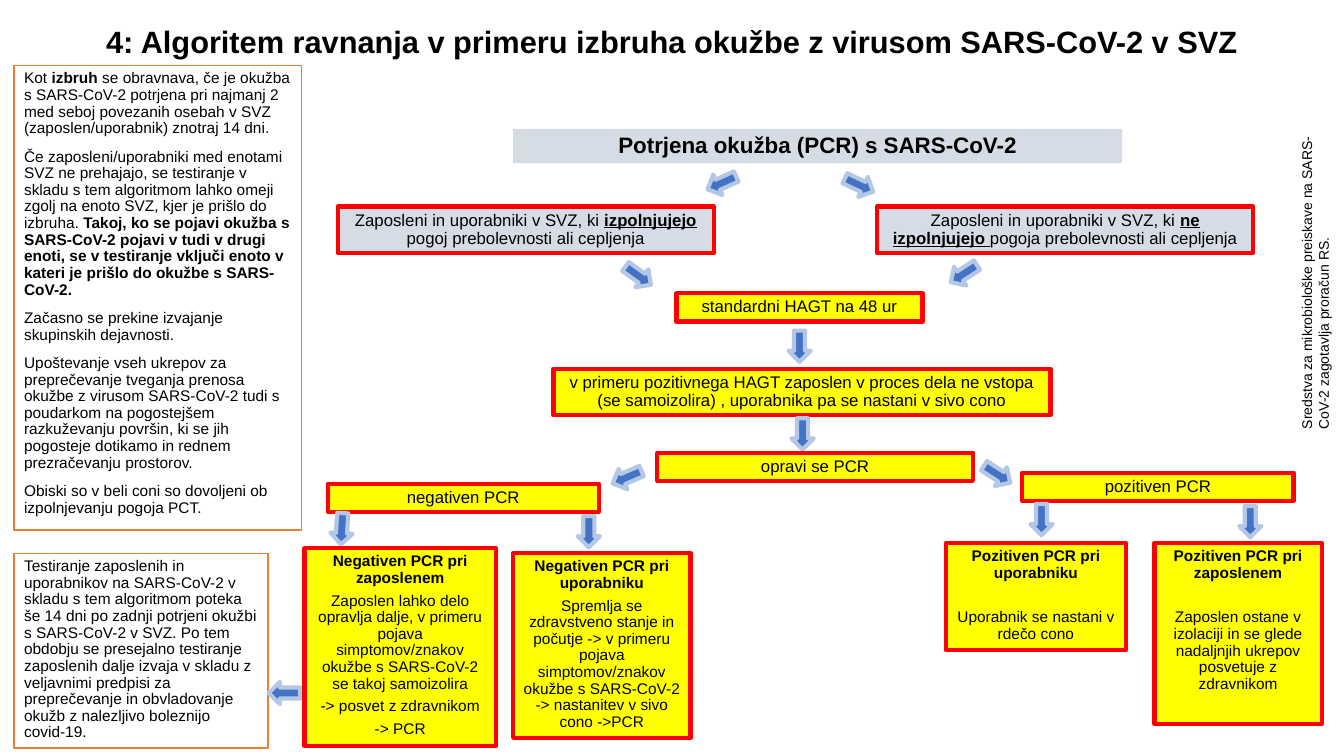
from pptx import Presentation
from pptx.dml.color import RGBColor
from pptx.enum.shapes import MSO_SHAPE
from pptx.enum.text import MSO_ANCHOR, PP_ALIGN
from pptx.util import Inches, Pt

RECTANGLE, DOWN_ARROW = MSO_SHAPE.RECTANGLE, MSO_SHAPE.DOWN_ARROW
LEFT, CENTER = PP_ALIGN.LEFT, PP_ALIGN.CENTER
TOP, MIDDLE = MSO_ANCHOR.TOP, MSO_ANCHOR.MIDDLE

WHITE, BLACK, GREY, YELLOW = "FFFFFF", "000000", "D6DCE5", "FFFF00"
RED, ORANGE, BLUE, PALE_BLUE = "FF0000", "ED7D31", "4472C4", "B4C7E7"

# A paragraph is a list of (text, style) spans; "b" is bold, "u" is underlined.
OUTBREAK_RULES = [
    [("Kot ", ""), ("izbruh", "b"),
     (" se obravnava, če je okužba s SARS-CoV-2 potrjena pri najmanj 2 med seboj povezanih "
      "osebah v SVZ (zaposlen/uporabnik) znotraj 14 dni.", "")],
    [("Če zaposleni/uporabniki med enotami SVZ ne prehajajo, se testiranje v skladu s tem "
      "algoritmom lahko omeji zgolj na enoto SVZ, kjer je prišlo do izbruha. ", ""),
     ("Takoj, ko se pojavi okužba s SARS-CoV-2 pojavi v tudi v drugi enoti, se v testiranje "
      "vključi enoto v kateri je prišlo do okužbe s SARS-CoV-2.", "b")],
    [("Začasno se prekine izvajanje skupinskih dejavnosti.", "")],
    [("Upoštevanje vseh ukrepov za preprečevanje tveganja prenosa okužbe z virusom SARS-CoV-2 "
      "tudi s poudarkom na pogostejšem razkuževanju površin, ki se jih pogosteje dotikamo in "
      "rednem prezračevanju prostorov.", "")],
    [("Obiski so v beli coni so dovoljeni ob izpolnjevanju pogoja PCT.", "")],
]
TESTING_PERIOD = [
    [("Testiranje zaposlenih in uporabnikov na SARS-CoV-2 v skladu s tem algoritmom poteka še "
      "14 dni po zadnji potrjeni okužbi s SARS-CoV-2 v SVZ. Po tem obdobju se presejalno "
      "testiranje zaposlenih dalje izvaja v skladu z veljavnimi predpisi za preprečevanje in "
      "obvladovanje okužb z nalezljivo boleznijo covid-19.", "")],
]
# Left, top, width, height, fill, spans
STEPS = [
    (3.35, 2.05, 3.73, 0.46, GREY,
     [("Zaposleni in uporabniki v SVZ, ki ", ""), ("izpolnjujejo", "bu"),
      (" pogoj prebolevnosti ali cepljenja", "")]),
    (8.7, 2.05, 3.73, 0.46, GREY,
     [("Zaposleni in uporabniki v SVZ, ki ", ""), ("ne izpolnjujejo ", "bu"),
      ("pogoja prebolevnosti ali cepljenja", "")]),
    (6.71, 2.91, 2.44, 0.28, YELLOW, [("standardni HAGT na 48 ur", "")]),
    (5.49, 3.66, 4.93, 0.46, YELLOW,
     [("v primeru pozitivnega HAGT zaposlen v proces dela ne vstopa (se samoizolira) , "
       "uporabnika pa se nastani v sivo cono", "")]),
    (3.25, 4.8, 2.69, 0.28, YELLOW, [("negativen PCR", "")]),
    (10.14, 4.69, 2.69, 0.28, YELLOW, [("pozitiven PCR", "")]),
]
PCR_STEP = (6.52, 4.49, 3.13, 0.28, YELLOW, [("opravi se PCR", "")])
# Left, top, rotation
ARROWS = [
    (7.05, 1.66, 66), (8.41, 1.68, 295.4), (6.22, 2.58, 305.8), (9.45, 2.56, 56.9),
    (7.82, 3.28, 0), (7.85, 4.15, 0), (6.11, 4.58, 66.7), (9.78, 4.55, 302.7),
    (3.28, 5.09, 3.4), (5.73, 5.12, 0), (10.22, 5, 0), (12.29, 5.02, 0), (2.71, 6.72, 90),
]
# Left, top, width, height, space after heading, heading, body paragraphs
OUTCOMES = [
    (3.02, 5.44, 1.9, 1.96, 4.4, "Negativen PCR pri zaposlenem",
     ["Zaposlen lahko delo opravlja dalje, v primeru pojava simptomov/znakov okužbe s "
      "SARS-CoV-2 se takoj samoizolira", "-> posvet z zdravnikom", "-> PCR"]),
    (5.09, 5.49, 1.76, 1.83, 4.4, "Negativen PCR pri uporabniku",
     ["Spremlja se zdravstveno stanje in počutje -> v primeru pojava simptomov/znakov okužbe s "
      "SARS-CoV-2 -> nastanitev v sivo cono ->PCR"]),
    (9.38, 5.39, 1.79, 1.06, 20, "Pozitiven PCR pri uporabniku",
     ["Uporabnik se nastani v rdečo cono"]),
    (11.45, 5.39, 1.66, 1.79, 20, "Pozitiven PCR pri zaposlenem",
     ["Zaposlen ostane v izolaciji in se glede nadaljnjih ukrepov posvetuje z zdravnikom"]),
]


def color(code):
    return RGBColor.from_string(code)


class FlowPage:
    font_name = "Arial"

    def __init__(self, page):
        self.page = page

    def fill_text(self, frame, paragraphs, size, align=LEFT, gap=0, spacing=0.9, anchor=TOP):
        frame.word_wrap = True
        frame.vertical_anchor = anchor
        for index, spans in enumerate(paragraphs):
            para = frame.add_paragraph() if index else frame.paragraphs[0]
            para.alignment = align
            para.line_spacing = spacing
            para.space_after = Pt(gap)
            para.font.name = self.font_name
            para.font.size = Pt(size)
            para.font.color.rgb = color(BLACK)
            for text, style in spans:
                span = para.add_run()
                span.text = text
                font = para.font if len(spans) == 1 else span.font
                font.bold = "b" in style
                font.underline = "u" in style

    def shape(self, kind, place, fill, line=None, line_width=3):
        shape = self.page.shapes.add_shape(kind, *map(Inches, place))
        shape.shadow.inherit = False
        shape.fill.solid()
        shape.fill.fore_color.rgb = color(fill)
        if line:
            shape.line.color.rgb = color(line)
            shape.line.width = Pt(line_width)
        else:
            shape.line.fill.background()
        return shape

    def label(self, place, text, size, style="", rotation=0, **layout):
        box = self.page.shapes.add_textbox(*map(Inches, place))
        box.rotation = rotation
        self.fill_text(box.text_frame, [[(text, style)]], size, **layout)

    def note(self, place, paragraphs):
        box = self.shape(RECTANGLE, place, WHITE, ORANGE, 1)
        self.fill_text(box.text_frame, paragraphs, 11, gap=8.4)

    def step(self, left, top, width, height, fill, spans, line=RED, size=12):
        box = self.shape(RECTANGLE, (left, top, width, height), fill, line)
        self.fill_text(box.text_frame, [spans], size, CENTER)

    def arrow(self, left, top, rotation):
        arrow = self.shape(DOWN_ARROW, (left, top, 0.22, 0.31), BLUE, PALE_BLUE)
        arrow.rotation = rotation

    def outcome(self, left, top, width, height, heading_gap, heading, body):
        box = self.shape(RECTANGLE, (left, top, width, height), YELLOW, RED)
        paragraphs = [[(heading, "b")]] + [[(text, "")] for text in body]
        self.fill_text(box.text_frame, paragraphs, 11, CENTER, gap=4.4)
        box.text_frame.paragraphs[0].space_after = Pt(heading_gap)


def main():
    deck = Presentation()
    deck.slide_width, deck.slide_height = Inches(13.33), Inches(7.5)
    flow = FlowPage(deck.slides.add_slide(deck.slide_layouts[6]))

    flow.label((0.56, 0.09, 12.21, 0.69),
               "4: Algoritem ravnanja v primeru izbruha okužbe z virusom SARS-CoV-2 v SVZ",
               22, "b", align=CENTER, anchor=MIDDLE)
    flow.note((0.14, 0.65, 2.85, 4.61), OUTBREAK_RULES)
    flow.note((0.14, 5.49, 2.52, 1.93), TESTING_PERIOD)
    flow.step(5.09, 1.28, 6.04, 0.34, GREY, [("Potrjena okužba (PCR) s SARS-CoV-2", "b")],
              line=None, size=16)
    for step in STEPS:
        flow.step(*step)
    for arrow in ARROWS:
        flow.arrow(*arrow)
    flow.step(*PCR_STEP)
    for outcome in OUTCOMES:
        flow.outcome(*outcome)
    flow.label((11.43, 2.52, 3.23, 0.44),
               "Sredstva za mikrobiološke preiskave na SARS-CoV-2 zagotavlja proračun RS.",
               10, rotation=270, spacing=1.0)
    deck.save("out.pptx")


if __name__ == "__main__":
    main()
